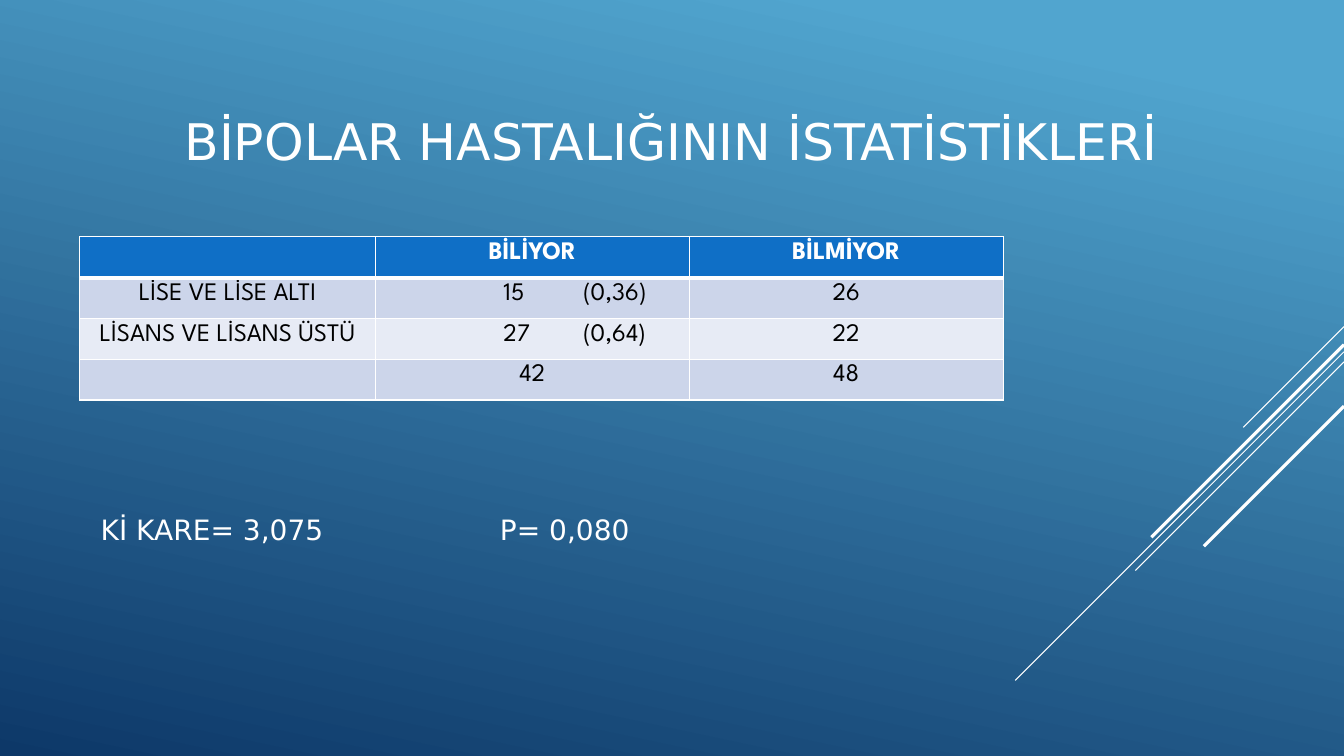
from lxml.etree import SubElement
from pptx import Presentation
from pptx.dml.color import RGBColor
from pptx.enum.shapes import MSO_CONNECTOR
from pptx.enum.text import MSO_ANCHOR, PP_ALIGN
from pptx.oxml import parse_xml
from pptx.oxml.ns import nsdecls, qn
from pptx.util import Inches, Pt

COLOURS = {
    "sky": "51A5CF",
    "navy": "0D3868",
    "white": "FFFFFF",
    "black": "000000",
    "header": "0F6FC6",
    "odd_row": "CCD5EA",
    "even_row": "E7EBF5",
}
HEADING_FONT = "DejaVu Sans"
TABLE_FONT = "League Spartan"
SLIDE_WIDTH, SLIDE_HEIGHT = 13.33, 7.5
COLUMN_WIDTHS = [2.93, 3.11, 3.11]
FREQUENCIES = [
    ["", "BİLİYOR", "BİLMİYOR"],
    ["LİSE VE LİSE ALTI", "\t15\t(0,36)", "26"],
    ["LİSANS VE LİSANS ÜSTÜ", "\t27\t(0,64)", "22"],
    ["", "42", "48"],
]
COUNT_STOPS = [1.17, 1.96]
RAYS = [(3.24, 1.0, 0.75), (3.49, 3.26, 0.75), (3.59, 2.07, 0.75),
        (3.42, 1.91, 2.25), (4.03, 1.39, 2.25)]


def rgb(name):
    """Return the named colour."""
    return RGBColor.from_string(COLOURS[name])


def write(paragraph, text, font, size, colour, bold=False, align=PP_ALIGN.LEFT):
    """Set the text of a paragraph and format it."""
    paragraph.text = text
    paragraph.alignment = align
    style = paragraph.font if not paragraph.runs else paragraph.runs[0].font
    style.name, style.size, style.bold = font, Pt(size), bold
    style.color.rgb = rgb(colour)


def set_tab_stops(paragraph, stops):
    """Give a paragraph left tab stops, in inches."""
    tab_list = SubElement(paragraph._p.get_or_add_pPr(), qn("a:tabLst"))
    for stop in stops:
        SubElement(tab_list, qn("a:tab"), pos=str(Inches(stop)), algn="l")


def set_borders(cell, top, bottom):
    """Draw white borders round a cell, with widths in points."""
    widths = {"lnL": 1, "lnR": 1, "lnT": top, "lnB": bottom}
    for index, (side, width) in enumerate(widths.items()):
        cell._tc.get_or_add_tcPr().insert(index, parse_xml(
            f'<a:{side} {nsdecls("a")} w="{Pt(width)}"><a:solidFill>'
            f'<a:srgbClr val="{COLOURS["white"]}"/></a:solidFill></a:{side}>'))


def paint_background(slide):
    """Fill the slide with the blue gradient."""
    fill = slide.background.fill
    fill.gradient()
    fill.gradient_angle = 258
    for stop, position, colour in zip(fill.gradient_stops, (0.1, 1), ("sky", "navy")):
        stop.position = position
        stop.color.rgb = rgb(colour)


def add_rays(slide, right):
    """Draw the diagonal rays that fall from the right edge."""
    for top, reach, weight in RAYS:
        ray = slide.shapes.add_connector(
            MSO_CONNECTOR.STRAIGHT, Inches(right), Inches(top),
            Inches(right - reach), Inches(top + reach))
        ray.line.color.rgb = rgb("white")
        ray.line.width = Pt(weight)
        SubElement(ray._element.spPr, qn("a:effectLst"))


def add_title(slide, left, top, width, height):
    """Place the centred slide title."""
    title = slide.shapes.add_textbox(
        Inches(left), Inches(top), Inches(width), Inches(height)).text_frame
    title.word_wrap = True
    title.vertical_anchor = MSO_ANCHOR.MIDDLE
    write(title.paragraphs[0], "BİPOLAR HASTALIĞININ İSTATİSTİKLERİ",
          HEADING_FONT, 36, "white", align=PP_ALIGN.CENTER)


def add_frequency_table(slide, left, top, width, height):
    """Place the table of answers by level of education."""
    table = slide.shapes.add_table(
        len(FREQUENCIES), len(COLUMN_WIDTHS), Inches(left), Inches(top),
        Inches(width), Inches(height)).table
    table.first_row = table.horz_banding = False
    for column, share in zip(table.columns, COLUMN_WIDTHS):
        column.width = Inches(width * share / sum(COLUMN_WIDTHS))
    for row, answers in enumerate(FREQUENCIES):
        header = row == 0
        fill = "header" if header else "odd_row" if row % 2 else "even_row"
        for column, answer in enumerate(answers):
            cell = table.cell(row, column)
            cell.fill.solid()
            cell.fill.fore_color.rgb = rgb(fill)
            set_borders(cell, 3 if row == 1 else 1, 3 if header else 1)
            paragraph = cell.text_frame.paragraphs[0]
            tabbed = "\t" in answer
            write(paragraph, answer, TABLE_FONT, 18, "white" if header else "black",
                  header, PP_ALIGN.LEFT if tabbed else PP_ALIGN.CENTER)
            if tabbed:
                set_tab_stops(paragraph, COUNT_STOPS)


def add_test_result(slide, left, top, width, height):
    """Place the chi-square value and the p value on one line."""
    result = slide.shapes.add_textbox(
        Inches(left), Inches(top), Inches(width), Inches(height)).text_frame
    result.word_wrap = True
    write(result.paragraphs[0], "Kİ KARE= 3,075\tP= 0,080", HEADING_FONT, 20, "white")
    set_tab_stops(result.paragraphs[0], [3.96])


def main():
    """Build the slide and save it."""
    deck = Presentation()
    deck.slide_width, deck.slide_height = Inches(SLIDE_WIDTH), Inches(SLIDE_HEIGHT)
    slide = deck.slides.add_slide(deck.slide_layouts[6])
    paint_background(slide)
    add_rays(slide, SLIDE_WIDTH)
    add_title(slide, 0.26, 0.58, 12.8, 1.62)
    add_frequency_table(slide, 0.79, 2.35, 9.16, 1.62)
    add_test_result(slide, 0.9, 5.04, 8.85, 0.44)
    deck.save("out.pptx")


if __name__ == "__main__":
    main()
